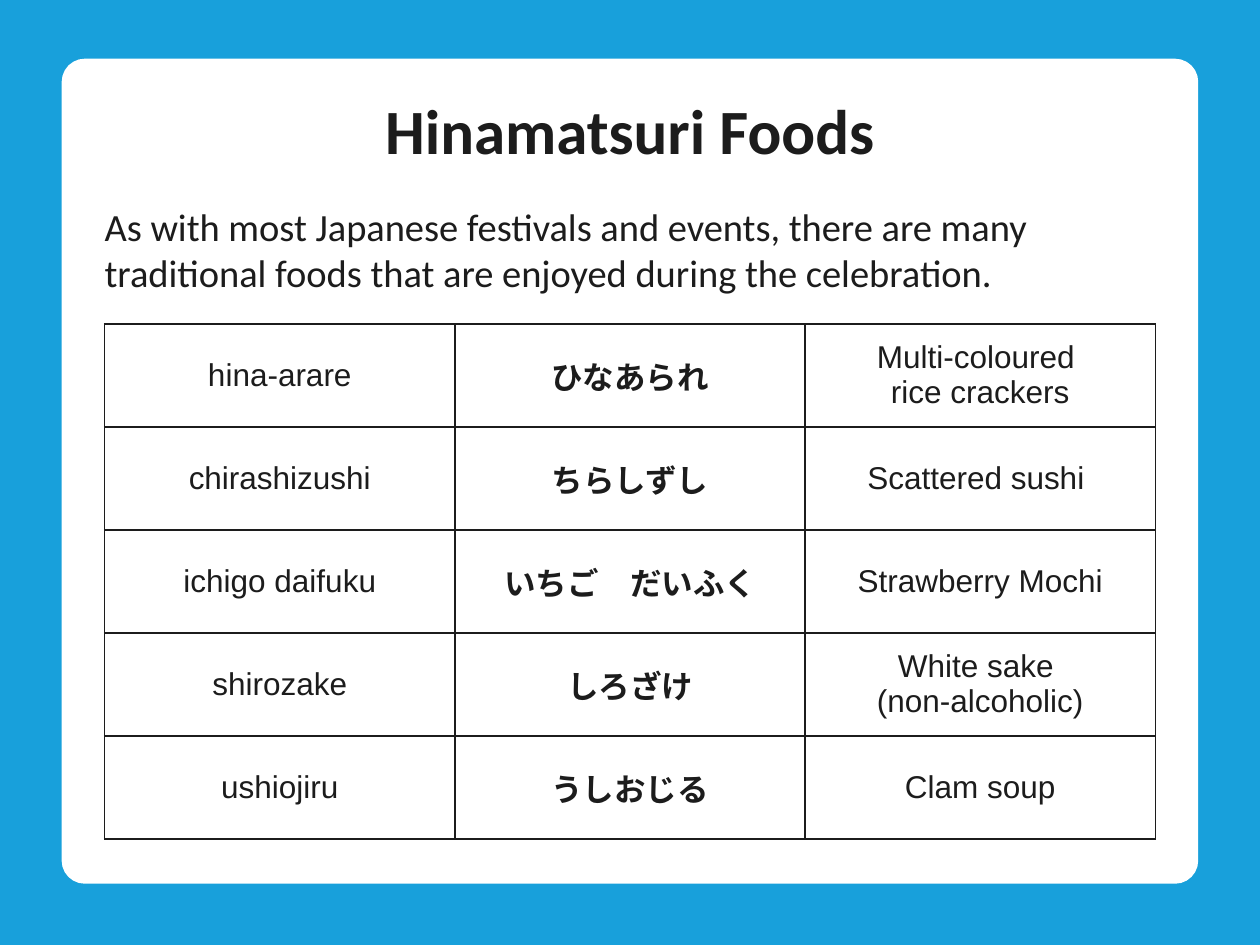
import lxml.etree
import pptx
import pptx.dml.color
import pptx.enum.shapes
import pptx.enum.text
import pptx.oxml.ns
import pptx.util

Cm = pptx.util.Cm
Pt = pptx.util.Pt
ALIGN = pptx.enum.text.PP_ALIGN
ANCHOR = pptx.enum.text.MSO_ANCHOR
COLOURS = {"sky": "18A0DB", "card": "FFFFFF", "ink": "1C1C1C"}
FOODS = [
    ("hina-arare", "ひなあられ", "Multi-coloured \nrice crackers"),
    ("chirashizushi", "ちらしずし", "Scattered sushi "),
    ("ichigo daifuku", "いちご　だいふく", "Strawberry Mochi"),
    ("shirozake", "しろざけ", "White sake \n(non-alcoholic)"),
    ("ushiojiru", "うしおじる", "Clam soup"),
]


def paint(fill, colour):
    """Fill solidly with a named colour."""
    fill.solid()
    fill.fore_color.rgb = pptx.dml.color.RGBColor.from_string(COLOURS[colour])


def write(paragraph, text, font_name, size, bold=False, align=ALIGN.CENTER):
    """Set the wording and look of one paragraph."""
    paragraph.text = text
    paragraph.alignment = align
    font = paragraph.font
    font.name, font.size, font.bold = font_name, Pt(size), bold
    paint(font.fill, "ink")


def add_card(slide, left, top, width, height):
    """Draw the white rounded card."""
    card = slide.shapes.add_shape(
        pptx.enum.shapes.MSO_SHAPE.ROUNDED_RECTANGLE,
        Cm(left), Cm(top), Cm(width), Cm(height))
    card.adjustments[0] = 0.026
    card.shadow.inherit = False
    paint(card.fill, "card")
    paint(card.line.fill, "card")
    card.line.width = Pt(2)


def add_text(slide, left, top, width, height, inset, anchor):
    """Add a wrapping text frame with equal insets."""
    frame = slide.shapes.add_textbox(Cm(left), Cm(top), Cm(width), Cm(height)).text_frame
    frame.word_wrap = True
    frame.vertical_anchor = anchor
    frame.margin_left = frame.margin_right = Cm(inset)
    frame.margin_top = frame.margin_bottom = Cm(inset)
    return frame


def add_heading(slide, left, top, width, height):
    """Place the centred slide title."""
    title = add_text(slide, left, top, width, height, 0.71, ANCHOR.MIDDLE).paragraphs[0]
    write(title, "Hinamatsuri Foods", "Calibri", 36, bold=True)
    title.line_spacing = 0.9


def add_intro(slide, left, top, width, height):
    """Place the introductory sentence."""
    intro = add_text(slide, left, top, width, height, 0, ANCHOR.TOP).paragraphs[0]
    write(intro, "As with most Japanese festivals and events, there are many "
          "traditional foods that are enjoyed during the celebration.",
          "Calibri", 22, align=ALIGN.LEFT)


def add_borders(cell):
    """Rule all four sides of a cell."""
    qn = pptx.oxml.ns.qn
    properties = cell._tc.get_or_add_tcPr()
    for side in ("lnL", "lnR", "lnT", "lnB"):
        rule = lxml.etree.SubElement(properties, qn(f"a:{side}"), w=str(Pt(1)))
        solid = lxml.etree.SubElement(rule, qn("a:solidFill"))
        lxml.etree.SubElement(solid, qn("a:srgbClr"), val=COLOURS["ink"])


def add_food_table(slide, left, top, width, height):
    """Lay out the foods by romaji, kana and meaning."""
    table = slide.shapes.add_table(
        len(FOODS), len(FOODS[0]), Cm(left), Cm(top), Cm(width), Cm(height)).table
    table.first_row = table.horz_banding = False
    for row, food in enumerate(FOODS):
        for column, wording in enumerate(food):
            cell = table.cell(row, column)
            add_borders(cell)
            paint(cell.fill, "card")
            cell.vertical_anchor = ANCHOR.MIDDLE
            cell.margin_left = cell.margin_right = Cm(0.25)
            cell.margin_top = cell.margin_bottom = Cm(0.25)
            write(cell.text_frame.paragraphs[0], wording, "Arial", 18, bold=column == 1)


def add_foods_slide(deck, left, top, width, height):
    """Build the slide inside the box of its card."""
    slide = deck.slides.add_slide(deck.slide_layouts[6])
    paint(slide.background.fill, "sky")
    add_card(slide, left, top, width, height)
    add_heading(slide, left, top + 0.1, width, 2.77)
    margin = 0.83
    inner_width = width - 2 * margin
    add_intro(slide, left + margin, top + 2.87, inner_width, 1.88)
    add_food_table(slide, left + margin, top + 5.31, inner_width, 10.38)


def main():
    """Create and save the deck."""
    deck = pptx.Presentation()
    deck.slide_width, deck.slide_height = Cm(25.4), Cm(19.05)
    add_foods_slide(deck, 1.28, 1.22, 22.84, 16.56)
    deck.save("out.pptx")


if __name__ == "__main__":
    main()
